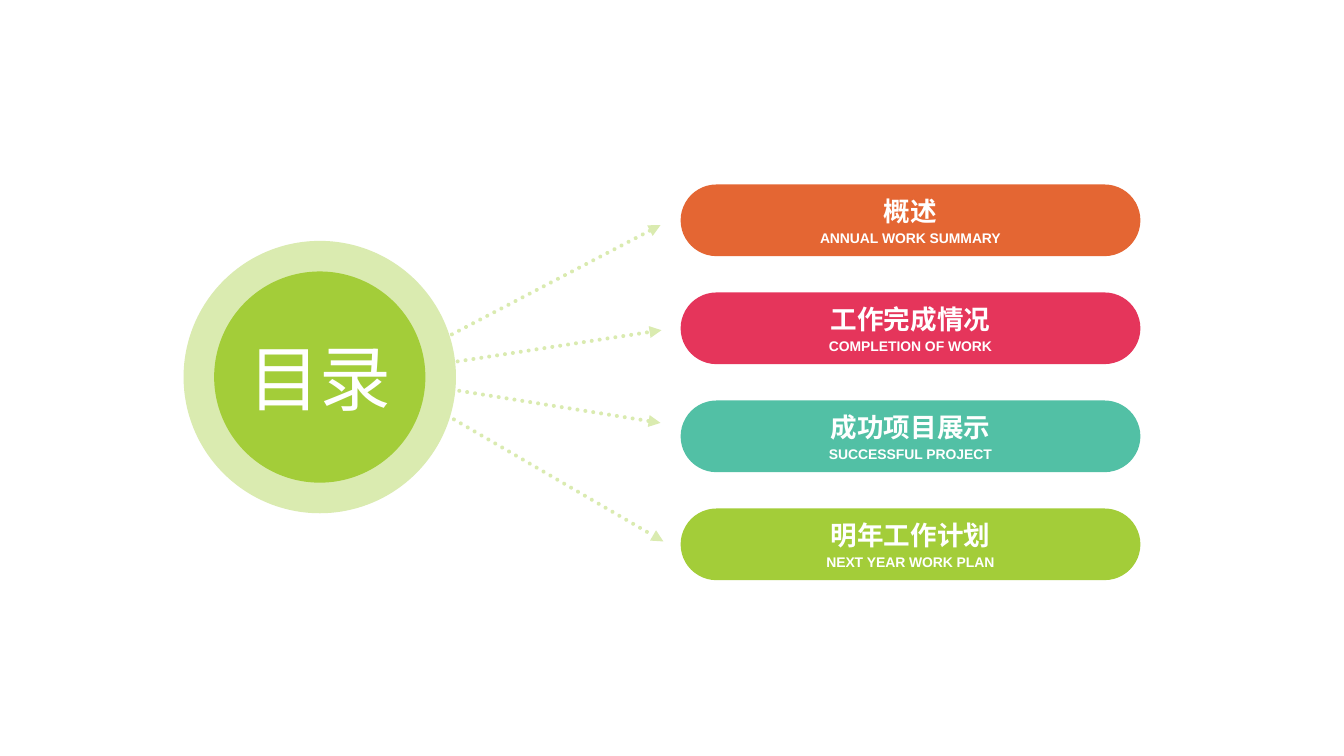
from lxml import etree
from pptx import Presentation
from pptx.dml.color import RGBColor
from pptx.enum.dml import MSO_LINE
from pptx.enum.shapes import MSO_CONNECTOR, MSO_SHAPE
from pptx.enum.text import MSO_ANCHOR, PP_ALIGN
from pptx.oxml.ns import qn
from pptx.util import Inches, Pt

ELLIPSE = MSO_SHAPE.OVAL
PILL = MSO_SHAPE.ROUNDED_RECTANGLE
STRAIGHT = MSO_CONNECTOR.STRAIGHT
DOTTED = MSO_LINE.ROUND_DOT
MIDDLE = MSO_ANCHOR.MIDDLE
CENTER = PP_ALIGN.CENTER

WHITE, LIME, PALE_LIME = "FFFFFF", "A3CD39", "DAEBB0"
HUB_FORMAT = {"size": Pt(54), "bold": False}
TITLE_FORMAT = {"size": Pt(20), "bold": True}
SUBTITLE_FORMAT = {"size": Pt(10.5), "bold": True}

HUB_BOX = (1.92, 2.52, 2.85, 2.85)
HUB_INSET = 0.32
ENTRY_BOX = (7.12, 1.93, 4.81, 0.75)
ENTRY_PITCH = 1.13
ENTRIES = [
    ("概述", "ANNUAL WORK SUMMARY", "E46633"),
    ("工作完成情况", "COMPLETION OF WORK", "E5355B"),
    ("成功项目展示", "SUCCESSFUL PROJECT", "52C0A5"),
    ("明年工作计划", "NEXT YEAR WORK PLAN", LIME),
]
ARROW_OFFSETS = [
    ((2.29, 1.25), (-0.21, 0.05)),
    ((2.29, 1.35), (-0.2, 0.02)),
    ((2.39, 1.49), (-0.21, -0.14)),
    ((2.54, 1.7), (-0.18, -0.03)),
]


def color(value):
    return RGBColor.from_string(value)


def add_filled(page, kind, box, fill):
    shape = page.shapes.add_shape(kind, *map(Inches, box))
    shape.shadow.inherit = False
    shape.fill.solid()
    shape.fill.fore_color.rgb = color(fill)
    shape.line.fill.background()
    return shape


def write_lines(shape, lines):
    frame = shape.text_frame
    frame.word_wrap = True
    frame.vertical_anchor = MIDDLE
    for side in ("left", "top", "right", "bottom"):
        setattr(frame, f"margin_{side}", 0)
    for index, (text, values) in enumerate(lines):
        para = frame.add_paragraph() if index else frame.paragraphs[0]
        para.alignment = CENTER
        if index:
            para.space_before = Pt(2)
        span = para.add_run()
        span.text = text
        span.font.name = "Arial"
        span.font.color.rgb = color(WHITE)
        for name, value in values.items():
            setattr(span.font, name, value)


def add_hub(page, box):
    left, top, width, height = box
    add_filled(page, ELLIPSE, box, PALE_LIME)
    inner_box = (left + HUB_INSET, top + HUB_INSET,
                 width - 2 * HUB_INSET, height - 2 * HUB_INSET)
    inner = add_filled(page, ELLIPSE, inner_box, LIME)
    write_lines(inner, [("目录", HUB_FORMAT)])


def add_entry(page, box, title, subtitle, fill):
    pill = add_filled(page, PILL, box, fill)
    pill.adjustments[0] = 0.5
    write_lines(pill, [(title, TITLE_FORMAT), (subtitle, SUBTITLE_FORMAT)])


def add_arrow(page, hub_box, entry_box, start, tip):
    entry_middle = entry_box[1] + entry_box[3] / 2
    points = (hub_box[0] + start[0], hub_box[1] + start[1],
              entry_box[0] + tip[0], entry_middle + tip[1])
    arrow = page.shapes.add_connector(STRAIGHT, *map(Inches, points))
    arrow.line.color.rgb = color(PALE_LIME)
    arrow.line.width = Pt(3)
    arrow.line.dash_style = DOTTED
    properties = arrow._element.spPr
    outline = properties.find(qn("a:ln"))
    outline.set("cap", "rnd")
    etree.SubElement(outline, qn("a:tailEnd"), type="triangle")
    etree.SubElement(properties, qn("a:effectLst"))


def add_contents(page):
    left, top, width, height = ENTRY_BOX
    for index, (entry, offsets) in enumerate(zip(ENTRIES, ARROW_OFFSETS)):
        box = (left, top + index * ENTRY_PITCH, width, height)
        add_arrow(page, HUB_BOX, box, *offsets)
        add_entry(page, box, *entry)
    add_hub(page, HUB_BOX)


def main():
    deck = Presentation()
    deck.slide_width, deck.slide_height = Inches(14.06), Inches(7.91)
    page = deck.slides.add_slide(deck.slide_layouts[6])
    add_contents(page)
    deck.save("out.pptx")


if __name__ == "__main__":
    main()
